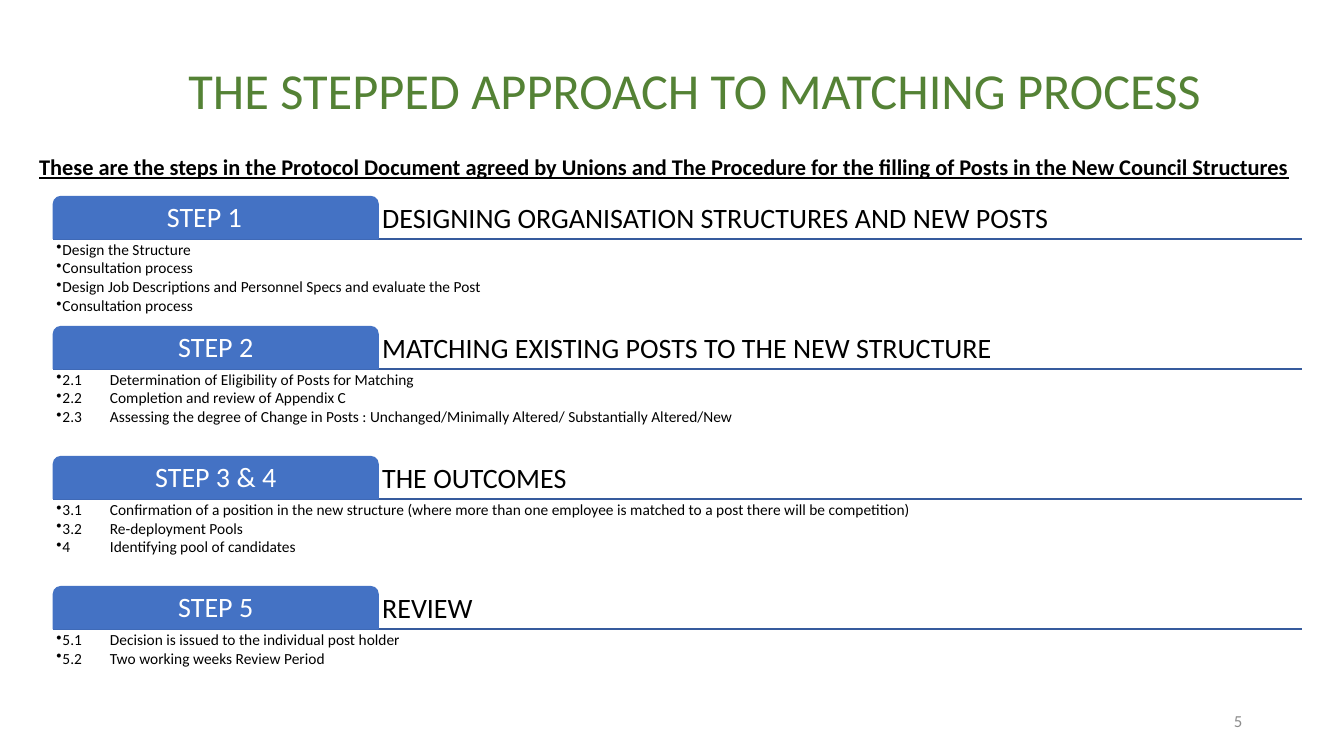
from pptx import Presentation
from pptx.dml.color import RGBColor
from pptx.enum.shapes import MSO_CONNECTOR, MSO_SHAPE
from pptx.enum.text import MSO_ANCHOR, PP_ALIGN
from pptx.oxml.ns import qn
from pptx.util import Pt
from lxml import etree

LINE = MSO_CONNECTOR.STRAIGHT
TAB_SHAPE = MSO_SHAPE.ROUND_2_SAME_RECTANGLE
TOP, MIDDLE, BOTTOM = MSO_ANCHOR.TOP, MSO_ANCHOR.MIDDLE, MSO_ANCHOR.BOTTOM
LEFT, CENTER, RIGHT = PP_ALIGN.LEFT, PP_ALIGN.CENTER, PP_ALIGN.RIGHT


def px(n):
    """100 px to the inch."""
    return n * 9144


def color(value):
    return RGBColor.from_string(value)


class Deck:
    FONT = "Calibri"
    BLUE, RULE, GREEN = "4472C4", "365B9D", "548235"
    BLACK, WHITE, GREY = "000000", "FFFFFF", "8C8C8C"

    def __init__(self, prs):
        self.s = prs.slides.add_slide(prs.slide_layouts[6])

    def fill_text(self, sp, lines, size, ink, align=LEFT, anchor=TOP, inset=(10, 5),
                  spacing=1.0, strong=False, bullets=False, tab=None):
        tf = sp.text_frame
        tf.word_wrap = True
        tf.vertical_anchor = anchor
        tf.margin_left = tf.margin_right = px(inset[0])
        tf.margin_top = tf.margin_bottom = px(inset[1])
        for i, line in enumerate(lines):
            p = tf.paragraphs[0] if i == 0 else tf.add_paragraph()
            p.text = line
            p.alignment = align
            p.line_spacing = spacing
            p.font.name = self.FONT
            p.font.size = Pt(size)
            p.font.color.rgb = color(ink)
            if strong:
                p.font.bold = p.font.underline = True
            if tab:
                p._p.get_or_add_pPr().set("defTabSz", str(px(tab)))
            if bullets:
                self.bullet(p)

    def bullet(self, p):
        p.level = 1
        p.space_after = Pt(1.5)
        pPr = p._p.get_or_add_pPr()
        pPr.set("marL", str(px(6)))
        pPr.set("indent", str(px(-6)))
        mark = etree.Element(qn("a:buChar"), char="•")
        pPr.find(qn("a:spcAft")).addnext(mark)

    def text(self, x, y, w, h, lines, size, ink, **style):
        sp = self.s.shapes.add_textbox(px(x), px(y), px(w), px(h))
        self.fill_text(sp, lines, size, ink, **style)

    def label(self, x, y, w, h, line):
        sp = self.s.shapes.add_shape(TAB_SHAPE, px(x), px(y), px(w), px(h))
        sp.shadow.inherit = False
        sp.adjustments[0] = 0.17
        sp.fill.solid()
        sp.fill.fore_color.rgb = color(self.BLUE)
        sp.line.color.rgb = color(self.BLUE)
        sp.line.width = Pt(1)
        self.fill_text(sp, [line], 20, self.WHITE, align=CENTER, anchor=MIDDLE,
                       inset=(4, 4), spacing=0.9, tab=97)

    def rule(self, x1, x2, y):
        c = self.s.shapes.add_connector(LINE, px(x1), px(y), px(x2), px(y))
        c.line.color.rgb = color(self.RULE)
        c.line.width = Pt(1)
        etree.SubElement(c._element.spPr, qn("a:effectLst"))

    def step(self, y, name, heading, points):
        x, w, label_w, h = 53, 1238, 322, 42
        self.rule(x, x + w, y + h)
        self.text(x + label_w, y, w - label_w, h, [heading], 20, self.BLACK,
                  anchor=BOTTOM, inset=(4, 4), spacing=0.9)
        self.label(x, y, label_w, h, name)
        self.text(x, y + h, w, 84, points, 11, self.BLACK,
                  inset=(3, 3), spacing=0.9, bullets=True, tab=53)


STEPS = [
    ("STEP 1\t", "DESIGNING ORGANISATION STRUCTURES AND NEW POSTS", [
        "Design the Structure",
        "Consultation process",
        "Design Job Descriptions and Personnel Specs and evaluate the Post",
        "Consultation process"]),
    ("STEP 2", "MATCHING EXISTING POSTS TO THE NEW STRUCTURE", [
        "2.1\tDetermination of Eligibility of Posts for Matching",
        "2.2\tCompletion and review of Appendix C",
        "2.3\tAssessing the degree of Change in Posts : "
        "Unchanged/Minimally Altered/ Substantially Altered/New"]),
    ("STEP 3 & 4", "THE OUTCOMES", [
        "3.1\tConfirmation of a position in the new structure (where more than "
        "one employee is matched to a post there will be competition)",
        "3.2\tRe-deployment Pools",
        "4\tIdentifying pool of candidates"]),
    ("STEP 5", "REVIEW", [
        "5.1\tDecision is issued to the individual post holder",
        "5.2\tTwo working weeks Review Period"]),
]


def main():
    prs = Presentation()
    prs.slide_width, prs.slide_height = px(1333), px(750)
    deck = Deck(prs)

    # Steps
    for i, (name, heading, points) in enumerate(STEPS):
        deck.step(195 + 129 * i, name, heading, points)

    # Title and subtitle
    deck.text(177, 54, 1039, 71, ["THE STEPPED APPROACH TO MATCHING PROCESS"],
              36, deck.GREEN)
    deck.text(29, 147, 1282, 37,
              ["These are the steps in the Protocol Document agreed by Unions and "
               "The Procedure for the filling of Posts in the New Council Structures"],
              16, deck.BLACK, strong=True)

    # Slide number
    deck.text(942, 695, 300, 40, ["5"], 12, deck.GREY, align=RIGHT, anchor=MIDDLE)

    prs.save("out.pptx")


if __name__ == "__main__":
    main()
